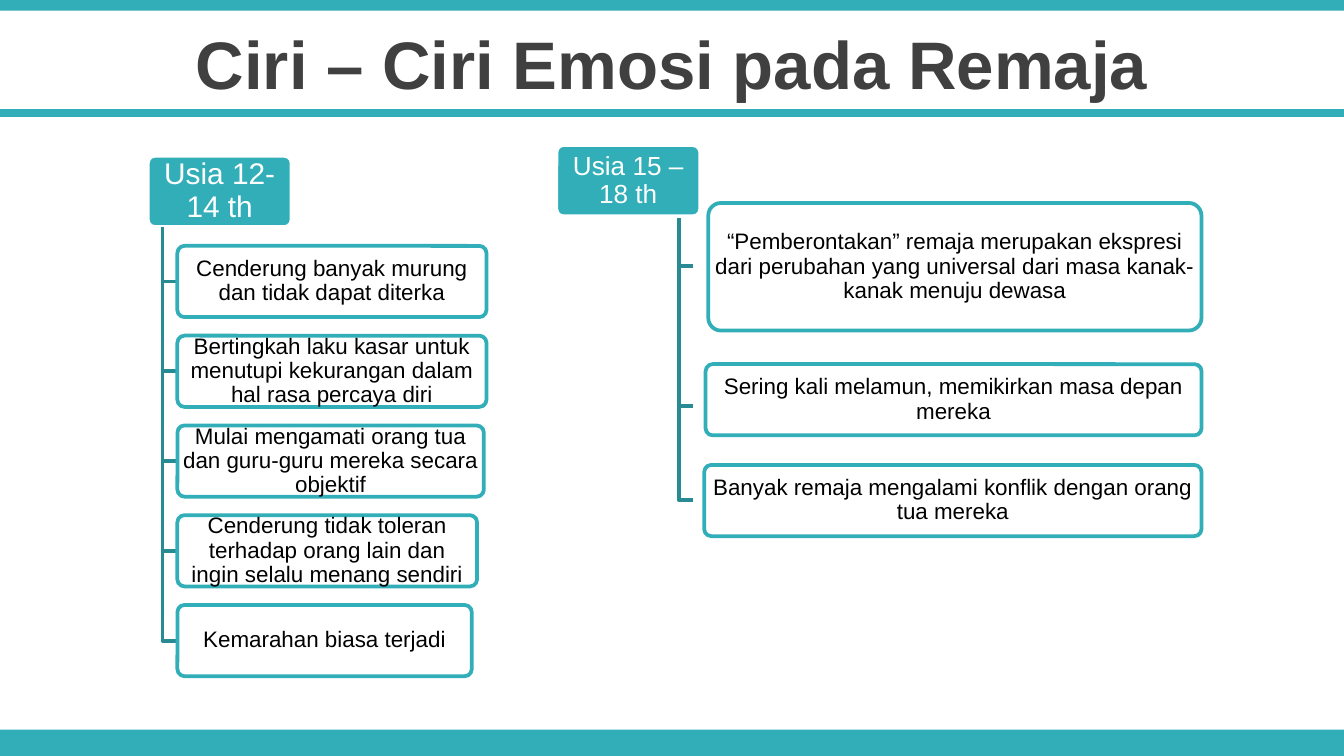
from lxml import etree
from pptx import Presentation
from pptx.dml.color import RGBColor
from pptx.enum.shapes import MSO_CONNECTOR, MSO_SHAPE
from pptx.enum.text import MSO_ANCHOR, PP_ALIGN
from pptx.oxml.ns import qn
from pptx.util import Inches, Pt

RECT, ROUNDED = MSO_SHAPE.RECTANGLE, MSO_SHAPE.ROUNDED_RECTANGLE
STRAIGHT = MSO_CONNECTOR.STRAIGHT
CENTER, MIDDLE = PP_ALIGN.CENTER, MSO_ANCHOR.MIDDLE

TEAL, DARK_TEAL, WHITE, BLACK, GREY = "32AEB8", "288B93", "FFFFFF", "000000", "404040"
SLIDE_WIDTH = Inches(10)
SLIDE_HEIGHT = SLIDE_WIDTH * 9 // 16
BOX_HEIGHT = 0.53
HEADER_WIDTH = 1.07
YOUNGER_TOP, YOUNGER_PITCH = 1.83, 0.668

TITLE = "Ciri – Ciri Emosi pada Remaja"
BANDS = [(5.43, 0.2), (0, 0.08)]  # top, height

# Traits: text, box width
YOUNGER = [
    ("Cenderung banyak murung dan tidak dapat diterka", 2.3),
    ("Bertingkah laku kasar untuk menutupi kekurangan dalam hal rasa percaya diri", 2.3),
    ("Mulai mengamati orang tua dan guru-guru mereka secara objektif", 2.28),
    ("Cenderung tidak toleran terhadap orang lain dan ingin selalu menang sendiri", 2.23),
    ("Kemarahan biasa terjadi", 2.19),
]
# Traits: text, box (left, top, width, height), branch start and end heights
OLDER = [
    ("“Pemberontakan” remaja merupakan ekspresi dari perubahan yang universal "
     "dari masa kanak-kanak menuju dewasa", (5.27, 1.51, 3.67, 0.95), (1.62, 1.98)),
    ("Sering kali melamun, memikirkan masa depan mereka",
     (5.25, 2.71, 3.69, BOX_HEIGHT), (1.95, 3.02)),
    ("Banyak remaja mengalami konflik dengan orang tua mereka",
     (5.24, 3.46, 3.7, BOX_HEIGHT), (1.99, 3.72)),
]


def younger_traits():
    """Yield the evenly stacked traits in the same form as OLDER."""
    for row, (text, width) in enumerate(YOUNGER):
        top = YOUNGER_TOP + row * YOUNGER_PITCH
        yield text, (1.32, top, width, BOX_HEIGHT), (1.69, top + BOX_HEIGHT / 2)


# Header text, size, left, top, trunk x, traits
AGE_GROUPS = [
    ("Usia 12-14 th", 16, 1.1, 1.16, 1.21, younger_traits()),
    ("Usia 15 – 18 th", 14, 4.14, 1.08, 5.05, OLDER),
]


def rgb(value):
    return RGBColor.from_string(value)


def write(shape, text, size, color, bold=False, spacing=None):
    frame = shape.text_frame
    for side in ("left", "right", "top", "bottom"):
        setattr(frame, f"margin_{side}", Inches(0.02))
    frame.word_wrap = True
    frame.vertical_anchor = MIDDLE
    paragraph = frame.paragraphs[0]
    paragraph.alignment = CENTER
    paragraph.line_spacing = spacing
    run = paragraph.add_run()
    run.text = text
    for name, value in {"name": "Arial", "size": Pt(size), "bold": bold}.items():
        setattr(run.font, name, value)
    run.font.color.rgb = rgb(color)


def add_box(shapes, kind, place, fill, line=None):
    box = shapes.add_shape(kind, *map(Inches, place))
    box.shadow.inherit = False
    box.fill.solid()
    box.fill.fore_color.rgb = rgb(fill)
    if line:
        box.line.color.rgb = rgb(line)
        box.line.width = Pt(2)
    else:
        box.line.fill.background()
    if kind == ROUNDED:
        box.adjustments[0] = 0.1
    return box


def add_branch(shapes, x, start, end):
    """Draw an elbow that drops down the trunk and turns right to a trait."""
    builder = shapes.build_freeform(Inches(x), Inches(start))
    builder.add_line_segments(
        [(Inches(x), Inches(end)), (Inches(x + 0.11), Inches(end))], close=False)
    branch = builder.convert_to_shape()
    branch.shadow.inherit = False
    branch.fill.background()
    branch.line.color.rgb = rgb(DARK_TEAL)
    branch.line.width = Pt(2)


def add_trait(shapes, text, place):
    box = add_box(shapes, ROUNDED, place, WHITE, TEAL)
    color = box._element.spPr.find(qn("a:solidFill"))[0]
    etree.SubElement(color, qn("a:alpha")).set("val", "90000")
    write(box, text, 12, BLACK, spacing=0.9)


def main():
    deck = Presentation()
    deck.slide_width, deck.slide_height = SLIDE_WIDTH, SLIDE_HEIGHT
    shapes = deck.slides.add_slide(deck.slide_layouts[6]).shapes

    for top, height in BANDS:
        add_box(shapes, RECT, (0, top, 10, height), TEAL)
    title = shapes.add_textbox(*map(Inches, (0, 0.15, 10, 0.63)))
    write(title, TITLE, 36, GREY, bold=True)

    for header, size, left, top, trunk, traits in AGE_GROUPS:
        place = (left, top, HEADER_WIDTH, BOX_HEIGHT)
        write(add_box(shapes, ROUNDED, place, TEAL, WHITE), header, size, WHITE, spacing=0.9)
        for text, box, (start, end) in traits:
            add_branch(shapes, trunk, start, end)
            add_trait(shapes, text, box)

    rule = shapes.add_connector(STRAIGHT, 0, Inches(0.84), SLIDE_WIDTH, Inches(0.84))
    rule.line.color.rgb = rgb(TEAL)
    rule.line.width = Pt(4.5)
    etree.SubElement(rule._element.spPr, qn("a:effectLst"))

    deck.save("out.pptx")


if __name__ == "__main__":
    main()
